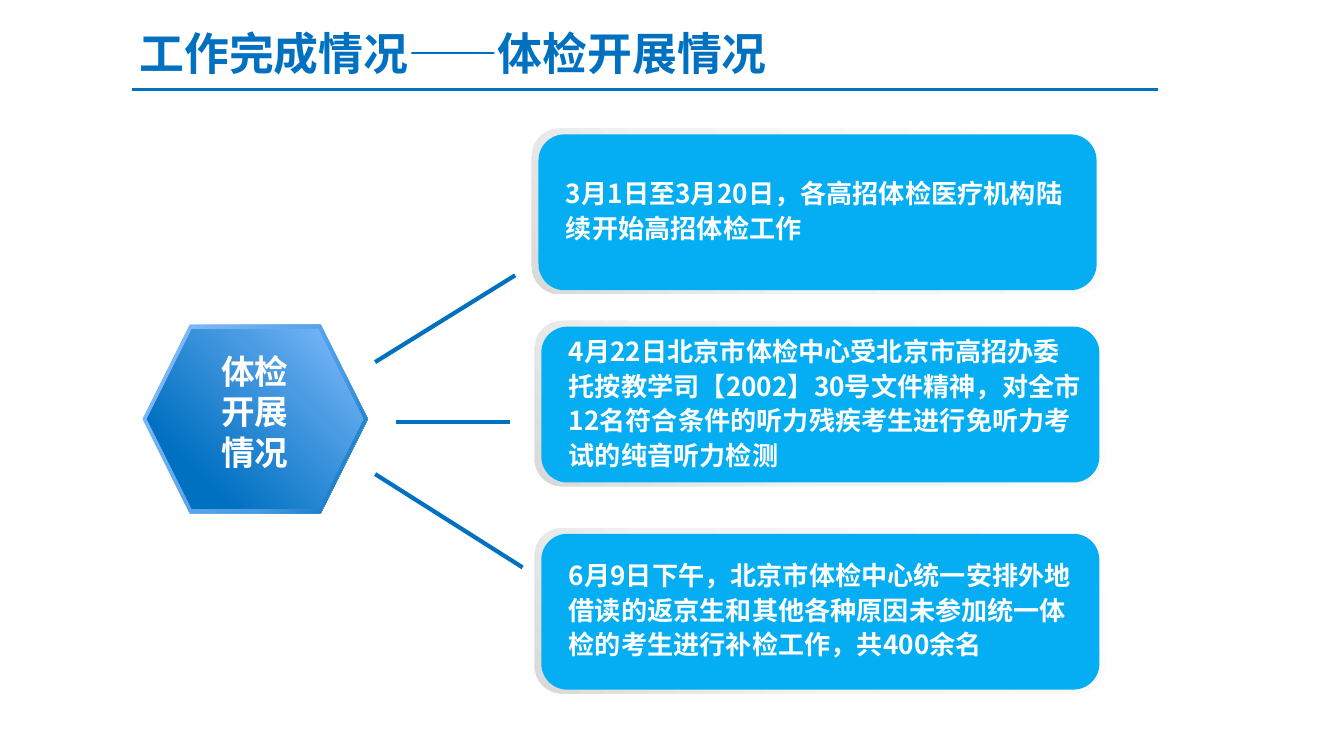
"""Build the slide on how the medical examinations were carried out."""
from lxml import etree
from pptx import Presentation
from pptx.dml.color import RGBColor
from pptx.enum.shapes import MSO_CONNECTOR, MSO_SHAPE
from pptx.enum.text import MSO_ANCHOR, MSO_AUTO_SIZE, PP_ALIGN
from pptx.oxml.ns import qn
from pptx.util import Pt

FONT = "Noto Sans CJK SC"
BLUE = RGBColor(0x00, 0x70, 0xC0)
SKY = RGBColor(0x05, 0xAE, 0xF3)
WHITE = RGBColor(0xFF, 0xFF, 0xFF)
MIST = RGBColor(0xF2, 0xF2, 0xF2)
GREY = RGBColor(0xD9, 0xD9, 0xD9)
PALE_BLUE = RGBColor(0x85, 0xBF, 0xFF)
MID_BLUE = RGBColor(0x49, 0x9B, 0xE2)

TITLE = "工作完成情况——体检开展情况"
TOPIC = ["体检", "开展", "情况"]
PANELS = [
    (285, 69, "3月1日至3月20日，各高招体检医疗机构陆续开始高招体检工作"),
    (286.5, 172, "4月22日北京市体检中心受北京市高招办委托按教学司【2002】30号文件精神，"
                 "对全市12名符合条件的听力残疾考生进行免听力考试的纯音听力检测"),
    (286.5, 283, "6月9日下午，北京市体检中心统一安排外地借读的返京生和其他各种原因"
                 "未参加统一体检的考生进行补检工作，共400余名"),
]
SPOKES = [(201, 254, 280, 304), (212, 226, 273, 226), (201, 194, 276, 147.5)]
HEXAGONS = [
    ((76.5, 174, 120.5, 101), [(0, PALE_BLUE), (67, MID_BLUE), (100, BLUE)], 32),
    ((79, 176.5, 115.5, 96), [(0, PALE_BLUE), (33, MID_BLUE), (79, BLUE)], 135),
]
RIM_STOPS = [(0, WHITE), (62, MIST), (100, GREY)]


def write_text(shape, paragraphs, size, color=WHITE, align=PP_ALIGN.LEFT, spacing=1.0,
               anchor=MSO_ANCHOR.TOP, wrap=True, insets=(7.2, 3.6)):
    frame = shape.text_frame
    frame.auto_size = MSO_AUTO_SIZE.NONE if wrap else MSO_AUTO_SIZE.SHAPE_TO_FIT_TEXT
    frame.word_wrap = wrap
    frame.vertical_anchor = anchor
    frame.margin_left = frame.margin_right = Pt(insets[0])
    frame.margin_top = frame.margin_bottom = Pt(insets[1])
    for index, text in enumerate(paragraphs):
        paragraph = frame.add_paragraph() if index else frame.paragraphs[0]
        paragraph.alignment = align
        paragraph.line_spacing = spacing
        paragraph.space_before = Pt(0)
        run = paragraph.add_run()
        run.text = text
        font = run.font
        font.name, font.size, font.bold = FONT, Pt(size), True
        font.color.rgb = color
        east_asian = etree.Element(qn("a:ea"), typeface=FONT)
        font._element.find(qn("a:latin")).addnext(east_asian)


def add_shape(slide, kind, box, color=None, stops=None, angle=0):
    shape = slide.shapes.add_shape(kind, *map(Pt, box))
    shape.shadow.inherit = False
    shape.line.fill.background()
    if stops:
        shape.fill.gradient()
        shape.fill.gradient_angle = 360 - angle
        stop_list = shape._element.spPr.find(".//" + qn("a:gsLst"))
        stop_list.clear()
        for position, stop_color in stops:
            stop = etree.SubElement(stop_list, qn("a:gs"), pos=str(position * 1000))
            etree.SubElement(stop, qn("a:srgbClr"), val=str(stop_color))
    elif color is not None:
        shape.fill.solid()
        shape.fill.fore_color.rgb = color
    else:
        shape.fill.background()
    return shape


def add_line(slide, ends, width):
    line = slide.shapes.add_connector(MSO_CONNECTOR.STRAIGHT, *map(Pt, ends))
    line.line.color.rgb = BLUE
    line.line.width = Pt(width)
    etree.SubElement(line._element.spPr, qn("a:effectLst"))


def add_panel(slide, left, top, text):
    rounded = MSO_SHAPE.ROUNDED_RECTANGLE
    add_shape(slide, rounded, (left, top, 306, 88.5), stops=RIM_STOPS, angle=135)
    add_shape(slide, rounded, (left + 3.5, top + 3, 299, 83.5), color=SKY)
    label = add_shape(slide, rounded, (left + 10, top - 3, 291, 92))
    label.adjustments[0] = 0.12
    write_text(label, [text], 14, spacing=1.1, anchor=MSO_ANCHOR.MIDDLE, insets=(5, 3))


def main():
    presentation = Presentation()
    presentation.slide_width, presentation.slide_height = Pt(720), Pt(405)
    slide = presentation.slides.add_slide(presentation.slide_layouts[5])
    title = slide.shapes.title
    title.left, title.top, title.width, title.height = map(Pt, (67.5, 4.5, 358, 42.5))
    write_text(title, [TITLE], 24, color=BLUE, spacing=1.2, wrap=False)
    add_line(slide, (70.5, 48, 620.5, 48), 1.25)
    for ends in SPOKES:
        add_line(slide, ends, 2.25)
    for box, stops, angle in HEXAGONS:
        add_shape(slide, MSO_SHAPE.HEXAGON, box, stops=stops, angle=angle)
    topic = slide.shapes.add_textbox(*map(Pt, (111, 184.5, 51, 72.5)))
    write_text(topic, TOPIC, 18, align=PP_ALIGN.CENTER, wrap=False)
    for left, top, text in PANELS:
        add_panel(slide, left, top, text)
    presentation.save("out.pptx")


if __name__ == "__main__":
    main()
